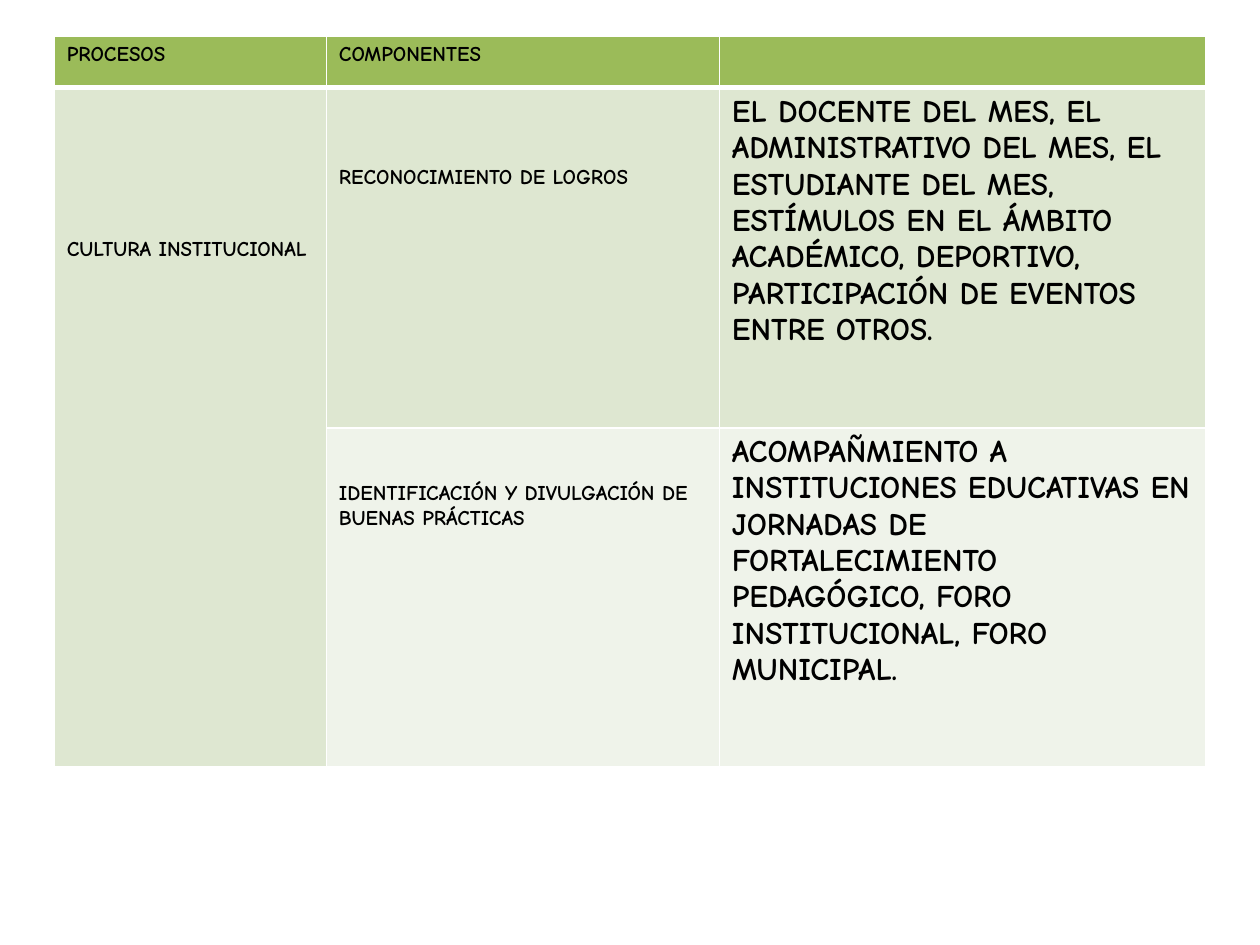
from dataclasses import dataclass

from lxml import etree
from pptx import Presentation
from pptx.dml.color import RGBColor
from pptx.enum.text import MSO_ANCHOR
from pptx.oxml.ns import qn
from pptx.util import Inches, Pt

TOP = MSO_ANCHOR.TOP
BLANK_LAYOUT = 6


@dataclass(frozen=True)
class Theme:
    font: str = "Comic Neue"
    ink: str = "000000"
    rule: str = "FFFFFF"
    header: str = "9BBB59"
    band_dark: str = "DEE7D1"
    band_light: str = "EFF3EA"
    label_size: int = 12
    detail_size: int = 18
    thin_rule: int = 1
    thick_rule: int = 3


@dataclass(frozen=True)
class Entry:
    row: int
    column: int
    text: str
    fill: str
    size: int = 12
    lines_down: int = 0  # label lines left free above the text


THEME = Theme()
PAGE_WIDTH, PAGE_HEIGHT = 10, 7.5
TABLE_LEFT, TABLE_TOP = 0.43, 0.29
COLUMN_WIDTHS = (2.16, 3.12, 3.86)
ROW_HEIGHTS = (0.4, 2.7, 2.69)
CELL_PADDING = 0.05
LABEL_LINE = 0.19

ENTRIES = (
    # Header
    Entry(0, 0, "PROCESOS", THEME.header),
    Entry(0, 1, "COMPONENTES", THEME.header),
    Entry(0, 2, "", THEME.header),
    # Recognition of achievements
    Entry(1, 0, "CULTURA INSTITUCIONAL", THEME.band_dark, lines_down=6),
    Entry(1, 1, "RECONOCIMIENTO DE LOGROS", THEME.band_dark, lines_down=3),
    Entry(1, 2, "EL DOCENTE DEL MES, EL ADMINISTRATIVO DEL MES, EL ESTUDIANTE "
          "DEL MES, ESTÍMULOS EN EL ÁMBITO ACADÉMICO, DEPORTIVO, "
          "PARTICIPACIÓN DE EVENTOS ENTRE OTROS.",
          THEME.band_dark, THEME.detail_size),
    # Good practices
    Entry(2, 0, "", THEME.band_dark),
    Entry(2, 1, "IDENTIFICACIÓN Y DIVULGACIÓN DE BUENAS PRÁCTICAS",
          THEME.band_light, lines_down=2),
    Entry(2, 2, "ACOMPAÑMIENTO A INSTITUCIONES EDUCATIVAS EN JORNADAS DE "
          "FORTALECIMIENTO PEDAGÓGICO, FORO INSTITUCIONAL, FORO MUNICIPAL.",
          THEME.band_light, THEME.detail_size),
)


def draw_borders(cell, bottom_width: int) -> None:
    """Rule all four sides of a cell; must come before its fill."""
    properties = cell._tc.get_or_add_tcPr()
    for side in ("lnL", "lnR", "lnT", "lnB"):
        width = bottom_width if side == "lnB" else THEME.thin_rule
        line = etree.SubElement(properties, qn(f"a:{side}"), w=str(Pt(width)))
        fill = etree.SubElement(line, qn("a:solidFill"))
        etree.SubElement(fill, qn("a:srgbClr"), val=THEME.rule)


def fill_cell(table, entry: Entry) -> None:
    cell = table.cell(entry.row, entry.column)
    draw_borders(cell, THEME.thick_rule if entry.row == 0 else THEME.thin_rule)
    cell.fill.solid()
    cell.fill.fore_color.rgb = RGBColor.from_string(entry.fill)
    cell.vertical_anchor = TOP
    cell.margin_top = Inches(CELL_PADDING + entry.lines_down * LABEL_LINE)
    if not entry.text:
        return
    cell.text_frame.text = entry.text
    for span in cell.text_frame.paragraphs[0].runs:
        span.font.name = THEME.font
        span.font.size = Pt(entry.size)
        span.font.bold = True
        span.font.color.rgb = RGBColor.from_string(THEME.ink)


def add_process_table(page) -> None:
    frame = page.shapes.add_table(
        len(ROW_HEIGHTS), len(COLUMN_WIDTHS),
        Inches(TABLE_LEFT), Inches(TABLE_TOP),
        Inches(sum(COLUMN_WIDTHS)), Inches(sum(ROW_HEIGHTS)))
    table = frame.table
    table.horz_banding = False
    for column, width in zip(table.columns, COLUMN_WIDTHS):
        column.width = Inches(width)
    for row, height in zip(table.rows, ROW_HEIGHTS):
        row.height = Inches(height)
    for entry in ENTRIES:
        fill_cell(table, entry)
    # The process spans both of its components
    table.cell(1, 0).merge(table.cell(2, 0))


def main() -> None:
    deck = Presentation()
    deck.slide_width = Inches(PAGE_WIDTH)
    deck.slide_height = Inches(PAGE_HEIGHT)
    page = deck.slides.add_slide(deck.slide_layouts[BLANK_LAYOUT])
    add_process_table(page)
    deck.save("out.pptx")


if __name__ == "__main__":
    main()
